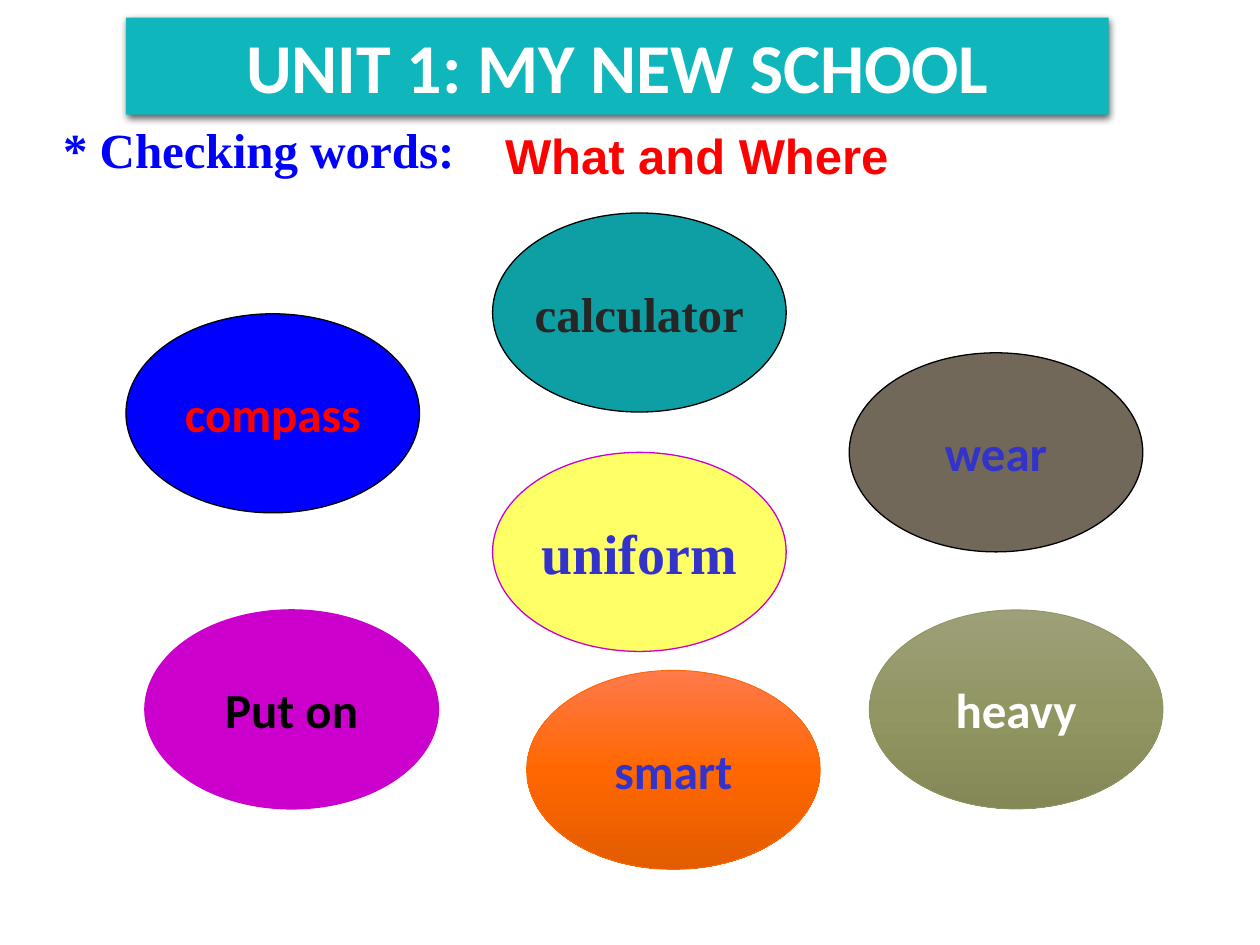
from lxml import etree
from pptx import Presentation
from pptx.dml.color import RGBColor
from pptx.enum.shapes import MSO_SHAPE
from pptx.enum.text import MSO_ANCHOR, PP_ALIGN
from pptx.oxml.ns import qn
from pptx.util import Inches, Pt

OVAL, RECTANGLE = MSO_SHAPE.OVAL, MSO_SHAPE.RECTANGLE
MIDDLE, TOP = MSO_ANCHOR.MIDDLE, MSO_ANCHOR.TOP
LEFT, CENTER = PP_ALIGN.LEFT, PP_ALIGN.CENTER
TITLE_ONLY = 5
SERIF, SANS, ARIAL = "Times New Roman", "Calibri", "Arial"
OVAL_WIDTH, OVAL_HEIGHT = 2.33, 1.58

COLORS = {
    "banner": "0FB7BD", "white": "FFFFFF", "black": "000000",
    "blue": "0000FF", "red": "FF0000", "indigo": "3333CC",
    "charcoal": "262626", "teal": "0D9FA3", "purple": "CC00CC",
    "yellow": "FFFF66", "brown": "71685A",
    "olive": "909465", "olive light": "9DA078", "olive mid": "929663",
    "olive dark": "838856",
    "orange": "FF6700", "orange light": "FF7A4B", "orange dark": "E35C00",
}
OLIVE_FADE = ("olive light", "olive mid", "olive dark")
ORANGE_FADE = ("orange light", "orange", "orange dark")

# word, left, top, fill (a tuple fades downwards), line, line width, font, size, text colour
WORDS = [
    ("calculator", 3.91, 1.69, "teal", "black", 0.75, SERIF, 28, "charcoal"),
    ("heavy", 6.9, 4.84, OLIVE_FADE, "olive", 0.5, SANS, 28, "white"),
    ("Put on", 1.15, 4.84, "purple", "purple", 0.75, SANS, 28, "black"),
    ("uniform", 3.91, 3.59, "yellow", "purple", 0.75, SERIF, 32, "indigo"),
    ("compass", 1, 2.49, "blue", "black", 0.75, SANS, 28, "red"),
    ("smart", 4.18, 5.32, ORANGE_FADE, "orange", 0.5, SANS, 28, "indigo"),
    ("wear", 6.74, 2.8, "brown", "black", 0.75, SANS, 28, "indigo"),
]


def rgb(name):
    return RGBColor.from_string(COLORS[name])


def write_text(shape, text, font, size, color, align, anchor, wrap=True):
    frame = shape.text_frame
    frame.text = text
    frame.word_wrap = wrap
    frame.vertical_anchor = anchor
    para = frame.paragraphs[0]
    para.alignment = align
    span = para.runs[0]
    span.font.name = font
    span.font.size = Pt(size)
    span.font.bold = True
    span.font.color.rgb = rgb(color)


def fill_fade(shape, names):
    """Fill from top to bottom with evenly spaced colours."""
    shape.fill.gradient()
    shape.fill.gradient_angle = 270
    stops = shape._element.spPr.find(qn("a:gradFill")).find(qn("a:gsLst"))
    for stop in list(stops):
        stops.remove(stop)
    for index, name in enumerate(names):
        position = 100000 * index // (len(names) - 1)
        stop = etree.SubElement(stops, qn("a:gs"), pos=str(position))
        etree.SubElement(stop, qn("a:srgbClr"), val=COLORS[name])


def add_shadow(shape):
    effects = shape._element.spPr.find(qn("a:effectLst"))
    shadow = etree.SubElement(
        effects, qn("a:outerShdw"), blurRad=str(Pt(4.5)), dist=str(Pt(1.5)),
        dir="5400000", rotWithShape="0")
    color = etree.SubElement(shadow, qn("a:srgbClr"), val=COLORS["black"])
    etree.SubElement(color, qn("a:alpha"), val="63000")


def add_heading(page):
    title = page.shapes.title
    title.left, title.top = Inches(0.4), Inches(0.91)
    title.width, title.height = Inches(3.83), Inches(0.61)
    write_text(title, "* Checking words:", SERIF, 28, "blue", LEFT, MIDDLE)
    title.text_frame.paragraphs[0].line_spacing = 0.9


def add_game_name(page):
    box = page.shapes.add_textbox(Inches(3.91), Inches(0.95), Inches(4.75), Inches(0.57))
    write_text(box, "What and Where", ARIAL, 28, "red", LEFT, TOP)


def add_word(page, word, left, top, fill, line, line_width, font, size, color):
    oval = page.shapes.add_shape(
        OVAL, Inches(left), Inches(top), Inches(OVAL_WIDTH), Inches(OVAL_HEIGHT))
    oval.shadow.inherit = False
    if isinstance(fill, tuple):
        fill_fade(oval, fill)
    else:
        oval.fill.solid()
        oval.fill.fore_color.rgb = rgb(fill)
    oval.line.color.rgb = rgb(line)
    oval.line.width = Pt(line_width)
    write_text(oval, word, font, size, color, CENTER, MIDDLE, wrap=False)


def add_banner(page):
    banner = page.shapes.add_shape(
        RECTANGLE, Inches(1), Inches(0.14), Inches(7.8), Inches(0.77))
    banner.fill.solid()
    banner.fill.fore_color.rgb = rgb("banner")
    banner.line.fill.background()
    banner.shadow.inherit = False
    add_shadow(banner)
    write_text(banner, "UNIT 1: MY NEW SCHOOL", SANS, 40, "white", CENTER, TOP)


def main():
    deck = Presentation()
    deck.slide_width, deck.slide_height = Inches(10), Inches(7.5)
    page = deck.slides.add_slide(deck.slide_layouts[TITLE_ONLY])
    add_heading(page)
    add_game_name(page)
    for word in WORDS:
        add_word(page, *word)
    add_banner(page)
    deck.save("out.pptx")


if __name__ == "__main__":
    main()
